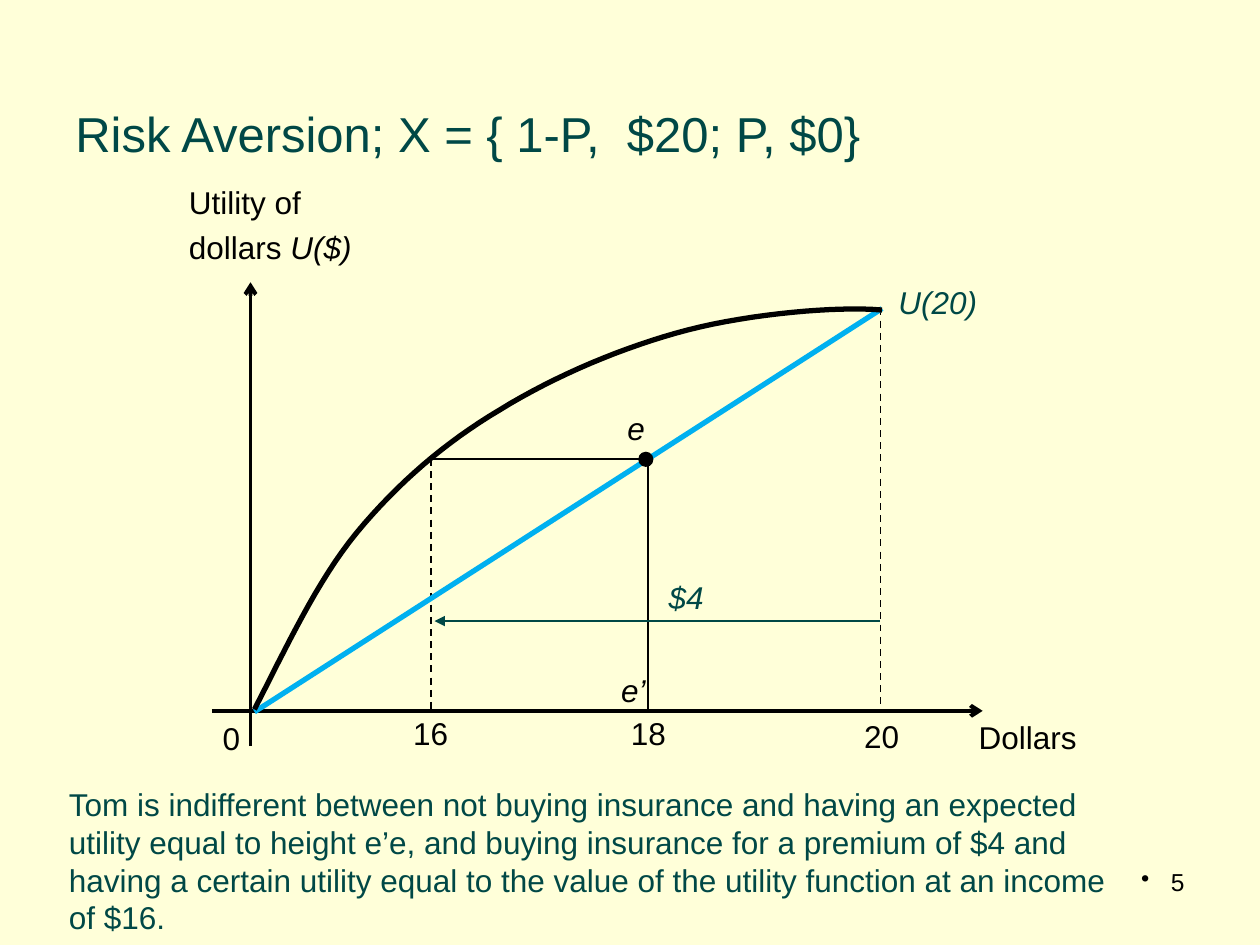
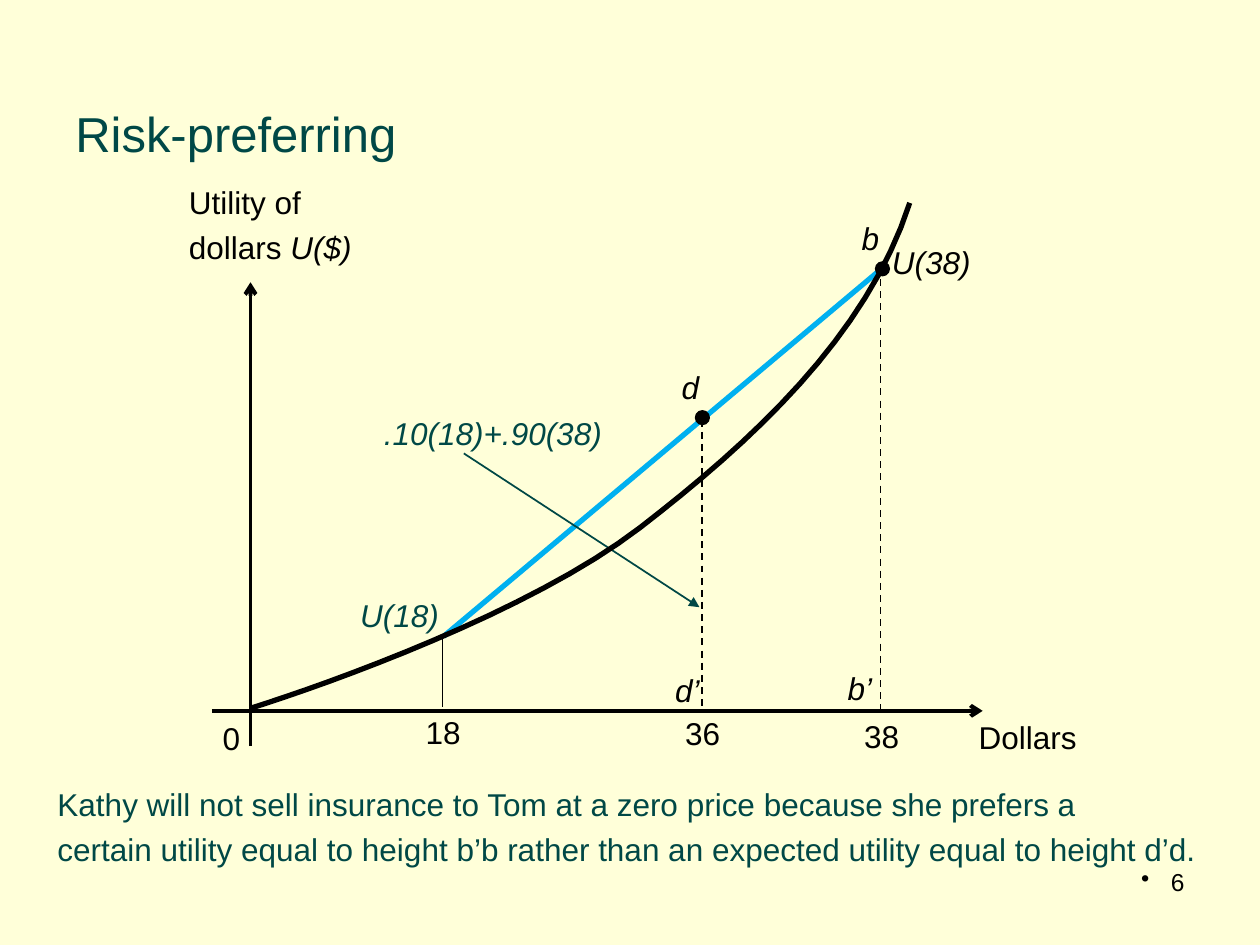
"""Build two utility-curve slides: risk aversion and risk preference."""
import lxml.etree
import pptx
import pptx.dml.color
import pptx.enum.dml
import pptx.enum.shapes
import pptx.enum.text
import pptx.oxml.ns
import pptx.util

Cm = pptx.util.Cm
Pt = pptx.util.Pt
rgb = pptx.dml.color.RGBColor.from_string
qn = pptx.oxml.ns.qn
BLACK, GREEN, BLUE, CREAM = "000000", "004846", "00B0F0", "FFFFD9"
ROW = 1.02


def add_text(s, x, y, w, h, paragraphs, color=BLACK, size=18, wrap=False):
    """Add a text box; each paragraph is a list of (text, italic) runs."""
    sp = s.shapes.add_textbox(Cm(x), Cm(y), Cm(w), Cm(h))
    tf = sp.text_frame
    tf.word_wrap = wrap
    for i, runs in enumerate(paragraphs):
        p = tf.paragraphs[0] if i == 0 else tf.add_paragraph()
        if i:
            p.space_before = Pt(4)
        for text, italic in runs:
            r = p.add_run()
            r.text = text
            r.font.name = "Arial"
            r.font.size = Pt(size)
            r.font.italic = italic
            r.font.color.rgb = rgb(color)
    return tf


def add_line(s, x1, y1, x2, y2, color=BLACK, width=1, dash=False, arrow=None):
    """Add a straight line, with an optional arrowhead at its end."""
    sp = s.shapes.add_connector(pptx.enum.shapes.MSO_CONNECTOR.STRAIGHT,
                                Cm(x1), Cm(y1), Cm(x2), Cm(y2))
    sp.line.color.rgb = rgb(color)
    sp.line.width = Pt(width)
    if dash:
        sp.line.dash_style = pptx.enum.dml.MSO_LINE.DASH
    spPr = sp._element.spPr
    if arrow:
        lxml.etree.SubElement(spPr.find(qn("a:ln")), qn("a:tailEnd"), type=arrow)
    lxml.etree.SubElement(spPr, qn("a:effectLst"))


slides = [
    {
        "title": "Risk Aversion; X = { 1-P,  $20; P, $0}",
        "number": "5",
        "note_box": (1.14, 15.7, 21.67, 3.33),
        "note": ["Tom is indifferent between not buying insurance and having an expected "
                 "utility equal to height e’e, and buying insurance for a premium of $4 and "
                 "having a certain utility equal to the value of the utility function at an "
                 "income of $16."],
        "lines": [
            (17.75, 6.22, 17.75, 14.33, BLACK, 1, True),
            (8.69, 9.25, 8.69, 14.35, BLACK, 1, True),
            (8.71, 9.25, 13.06, 9.25),
            (13.06, 9.25, 13.06, 14.35),
            (5.13, 14.35, 17.78, 6.22, BLUE, 3),
            (17.73, 12.52, 8.76, 12.52, GREEN, 1.5, False, "triangle"),
        ],
        "curve": [(5.13, 14.3), (5.77, 13.06), (6.38, 11.73), (7.19, 10.74),
                  (8.03, 9.73), (8.97, 8.92), (10.08, 8.26),
                  (11.2, 7.57), (12.57, 6.99), (13.87, 6.65),
                  (15.16, 6.32), (16.89, 6.17), (17.78, 6.25)],
        "ticks": [("16", 8.08, 14.27), ("18", 12.47, 14.27), ("20", 17.17, 14.33)],
        "labels": [
            ("U(20)", 17.86, 5.59, 2.11, GREEN),
            ("$4", 13.23, 11.53, 1.22, GREEN),
            ("e", 12.4, 8.13, 0.86, BLACK),
            ("e’", 12.27, 13.41, 1.02, BLACK),
        ],
        "dots": [(12.88, 9.12)],
    },
    {
        "title": "Risk-preferring",
        "number": "6",
        "note_box": (0.91, 15.7, 24.05, 1.96),
        "note": ["Kathy will not sell insurance to Tom at a zero price because she prefers a",
                 "certain utility equal to height b’b rather than an expected utility equal "
                 "to height d’d."],
        "lines": [
            (8.94, 12.83, 17.78, 5.41, BLUE, 3),
            (14.15, 8.46, 14.15, 14.35, BLACK, 1, True),
            (8.92, 12.85, 8.92, 14.25),
            (17.75, 5.38, 17.75, 14.35, BLACK, 1, True),
            (9.35, 9.14, 14.1, 12.24, GREEN, 1, False, "triangle"),
        ],
        "curve": [(18.34, 4.09), (17.48, 6.78), (15.11, 8.94), (12.9, 10.64),
                  (10.69, 12.34), (6.6, 13.79), (5.08, 14.27)],
        "ticks": [("18", 8.33, 14.25), ("36", 13.56, 14.27), ("38", 17.17, 14.33)],
        "labels": [
            ("U(38)", 17.73, 4.78, 2.11, BLACK),
            ("U(18)", 7.01, 11.89, 2.11, GREEN),
            (".10(18)+.90(38)", 7.49, 8.23, 4.95, GREEN),
            ("d", 13.49, 7.29, 0.86, BLACK),
            ("d’", 13.36, 13.41, 1.02, BLACK),
            ("b", 17.12, 4.29, 0.86, BLACK),
            ("b’", 16.84, 13.36, 1.02, BLACK),
        ],
        "dots": [(14.02, 8.28), (17.65, 5.28)],
    },
]

prs = pptx.Presentation()
prs.slide_width, prs.slide_height = Cm(25.4), Cm(19.05)
bg = prs.slide_master.background.fill
bg.solid()
bg.fore_color.rgb = rgb(CREAM)

for d in slides:
    s = prs.slides.add_slide(prs.slide_layouts[6])
    add_text(s, 1.27, 1.96, 24.13, 1.65, [[(d["title"], False)]], GREEN, 28, True)

    tf = add_text(s, 18.21, 17.35, 5.92, 1.32, [[(d["number"], False)]], size=14, wrap=True)
    p = tf.paragraphs[0]
    p.alignment = pptx.enum.text.PP_ALIGN.RIGHT
    pPr = p._p.get_or_add_pPr()
    pPr.set("marL", str(Cm(0.6)))
    pPr.set("indent", str(-Cm(0.6)))
    lxml.etree.SubElement(pPr, qn("a:buChar"), char="•")

    add_text(s, *d["note_box"], [[(text, False)] for text in d["note"]], GREEN, wrap=True)

    add_line(s, 4.27, 14.33, 19.81, 14.33, width=2.25, arrow="arrow")
    add_line(s, 5.05, 15.04, 5.05, 5.69, width=2.25, arrow="arrow")
    add_text(s, 4.24, 14.38, 0.86, ROW, [[("0", False)]])
    add_text(s, 19.48, 14.35, 2.69, ROW, [[("Dollars", False)]])
    add_text(s, 3.56, 3.56, 3.84, 1.96,
             [[("Utility of", False)], [("dollars ", False), ("U($)", True)]])

    for line in d["lines"]:
        add_line(s, *line)

    curve = d["curve"]
    points = []
    for i in range(0, len(curve) - 1, 3):
        for step in range(1, 17):
            t = step / 16
            weights = ((1 - t) ** 3, 3 * t * (1 - t) ** 2, 3 * t ** 2 * (1 - t), t ** 3)
            points.append([Cm(sum(w * c[axis] for w, c in zip(weights, curve[i:i + 4])))
                           for axis in (0, 1)])
    fb = s.shapes.build_freeform(Cm(curve[0][0]), Cm(curve[0][1]))
    fb.add_line_segments(points, close=False)
    sp = fb.convert_to_shape()
    sp.shadow.inherit = False
    sp.fill.background()
    sp.line.color.rgb = rgb(BLACK)
    sp.line.width = Pt(3)

    for text, x, y in d["ticks"]:
        add_text(s, x, y, 1.22, ROW, [[(text, False)]])
    for text, x, y, w, color in d["labels"]:
        add_text(s, x, y, w, ROW, [[(text, True)]], color)

    for x, y in d["dots"]:
        sp = s.shapes.add_shape(pptx.enum.shapes.MSO_SHAPE.OVAL, Cm(x), Cm(y), Cm(0.28), Cm(0.28))
        sp.shadow.inherit = False
        sp.fill.solid()
        sp.fill.fore_color.rgb = rgb(BLACK)
        sp.line.color.rgb = rgb(BLACK)
        sp.line.width = Pt(0.75)

prs.save("out.pptx")
